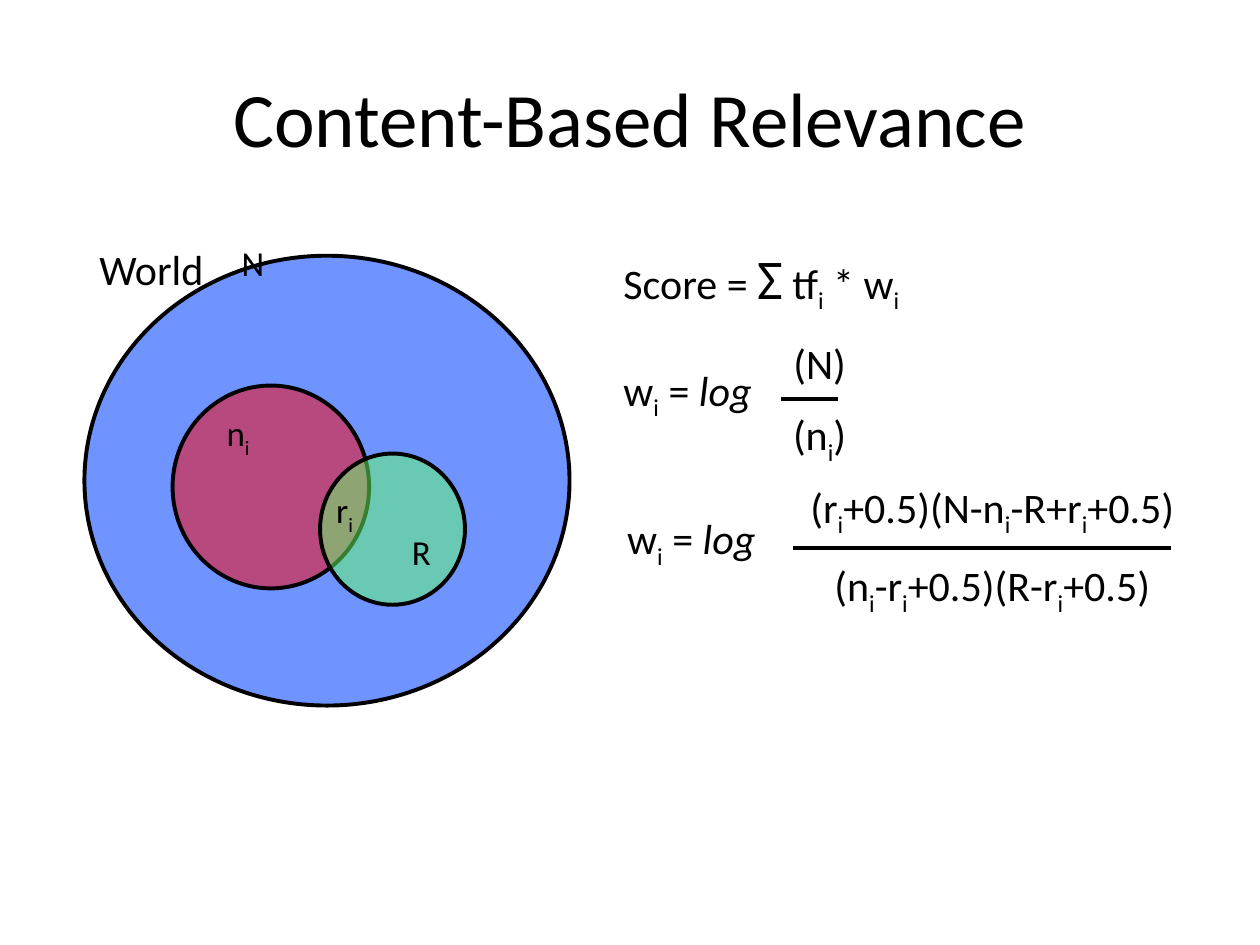
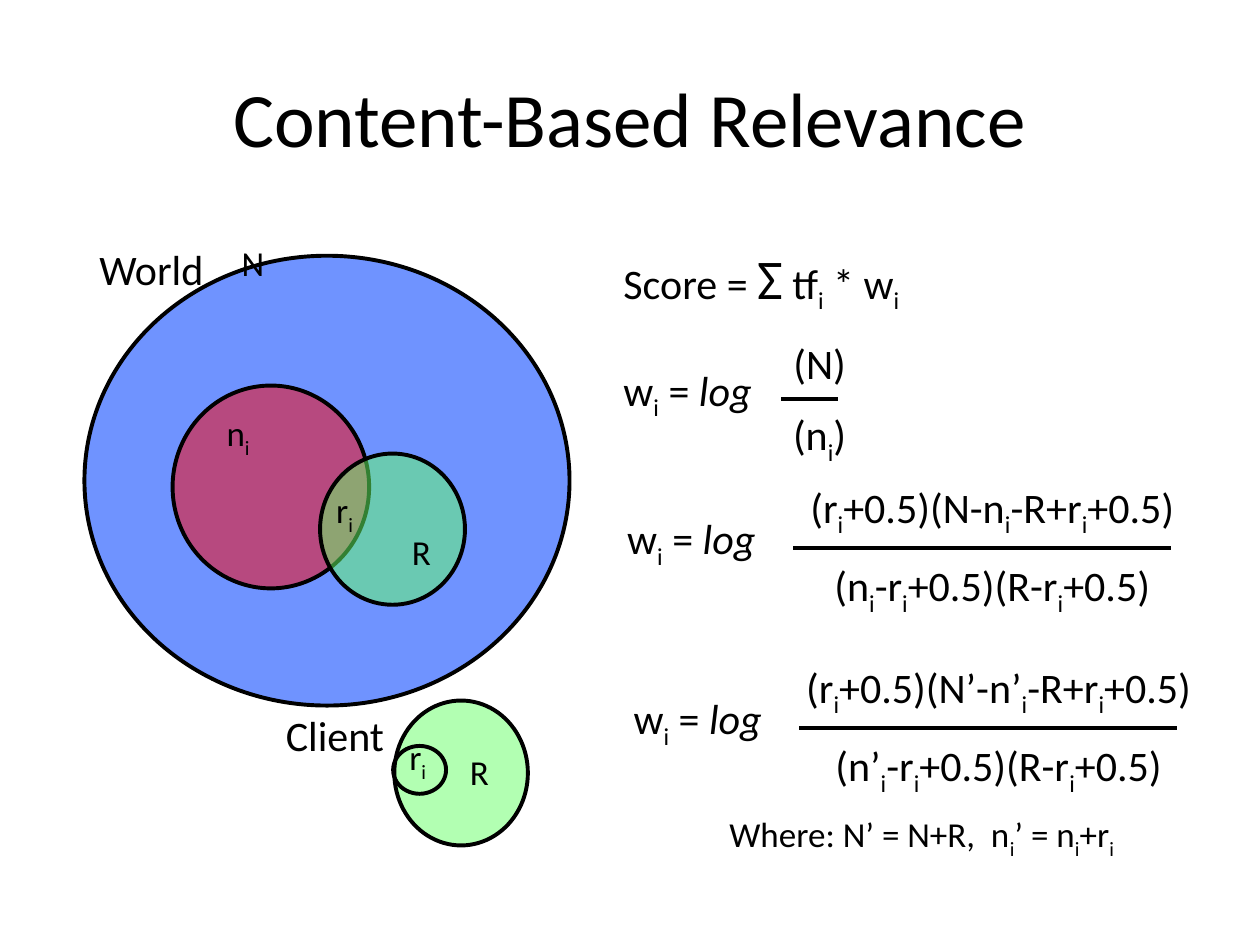
import pptx
import pptx.dml.color
import pptx.enum.shapes
import pptx.enum.text
import pptx.oxml
import pptx.oxml.ns
import pptx.util
from lxml import etree

Inches = pptx.util.Inches
Pt = pptx.util.Pt
RGBColor = pptx.dml.color.RGBColor
PP_ALIGN = pptx.enum.text.PP_ALIGN
MSO_ANCHOR = pptx.enum.text.MSO_ANCHOR

BLACK = RGBColor(0x00, 0x00, 0x00)
BLUE = RGBColor(0x33, 0x66, 0xFF)
RED = RGBColor(0xFF, 0x00, 0x00)
GREEN = RGBColor(0x66, 0xFF, 0x66)

FONT = "Calibri"
TITLE = "Content-Based Relevance"
TITLE_SIZE, FORMULA_SIZE, LABEL_SIZE, SUM_SIZE = 44, 24, 20, 32
LINE_WIDTH = Pt(2.25)
WEIGHT = "w|_i| = |/log"


def format_run(run, size, **extra):
    values = {"name": FONT, "size": Pt(size), **extra}
    for name, value in values.items():
        setattr(run.font, name, value)
    run.font.color.rgb = BLACK


def add_runs(paragraph, markup, size):
    """Split markup at "|"; a leading _ is subscript, / italic, ^ enlarged."""
    for segment in markup.split("|"):
        mark = segment[0] if segment[0] in "_/^" else ""
        run = paragraph.add_run()
        run.text = segment[len(mark):]
        if mark == "/":
            format_run(run, size, italic=True)
        else:
            format_run(run, SUM_SIZE if mark == "^" else size)
        if mark == "_":
            run._r.get_or_add_rPr().set("baseline", "-25000")


def add_text(slide, box, lines, size=FORMULA_SIZE, align=PP_ALIGN.LEFT):
    frame = slide.shapes.add_textbox(*map(Inches, box)).text_frame
    frame.word_wrap = True
    for index, line in enumerate(lines):
        paragraph = frame.add_paragraph() if index else frame.paragraphs[0]
        paragraph.alignment = align
        if index:
            paragraph.space_before = Pt(size / 2)
        add_runs(paragraph, line, size)


def add_circle(slide, box, color=None, opacity=50):
    circle = slide.shapes.add_shape(
        pptx.enum.shapes.MSO_SHAPE.OVAL, *map(Inches, box))
    circle.shadow.inherit = False
    circle.line.color.rgb = BLACK
    circle.line.width = LINE_WIDTH
    if color is None:
        circle.fill.background()
        return
    circle.fill.solid()
    circle.fill.fore_color.rgb = color
    color_element = circle._element.spPr.find(".//" + pptx.oxml.ns.qn("a:srgbClr"))
    alpha = etree.SubElement(color_element, pptx.oxml.ns.qn("a:alpha"))
    alpha.set("val", str(opacity * 1000))


def add_fraction_bar(slide, left, top, length):
    bar = slide.shapes.add_connector(
        pptx.enum.shapes.MSO_CONNECTOR.STRAIGHT,
        Inches(left), Inches(top), Inches(left + length), Inches(top))
    bar.line.color.rgb = BLACK
    bar.line.width = LINE_WIDTH
    etree.SubElement(bar._element.spPr, pptx.oxml.ns.qn("a:effectLst"))


def add_weight_formula(slide, left, top, fraction, bar_length, width,
                       bar_drop=0.58, weight_offset=(-1.16, 0.25)):
    """Draw "w = log" in front of a fraction whose bar is centred in its box."""
    add_text(slide, (left, top, width, 1.1), fraction, align=PP_ALIGN.CENTER)
    add_fraction_bar(slide, left + (width - bar_length) / 2 - 0.08,
                     top + bar_drop, bar_length)
    across, down = weight_offset
    add_text(slide, (left + across, top + down, 1.33, 0.5), [WEIGHT])


def add_world(slide):
    add_circle(slide, (0.67, 2.03, 3.85, 3.57), BLUE, opacity=70)
    add_text(slide, (1.82, 1.87, 0.58, 0.43), ["N"], LABEL_SIZE)
    add_circle(slide, (1.37, 3.06, 1.56, 1.61), RED)
    add_text(slide, (1.7, 3.22, 0.5, 0.43), ["n|_i"], LABEL_SIZE)
    add_circle(slide, (2.54, 3.6, 1.15, 1.2), GREEN)
    add_text(slide, (2.57, 3.83, 0.37, 0.44), ["r|_i"], LABEL_SIZE)
    add_text(slide, (3.17, 4.16, 0.32, 0.39), ["R"], LABEL_SIZE)
    add_text(slide, (0.69, 1.88, 1.14, 0.5), ["World"])


def add_client(slide):
    add_circle(slide, (3.13, 5.56, 1.06, 1.15), GREEN)
    add_text(slide, (3.15, 5.79, 0.47, 0.38), ["r|_i"], LABEL_SIZE)
    add_text(slide, (3.63, 5.91, 0.32, 0.38), ["R"], LABEL_SIZE)
    add_circle(slide, (3.12, 5.92, 0.42, 0.38))


def add_relevance_formula(slide, left, top, prime=""):
    fraction = [f"(r|_i|+0.5)(N{prime}-n{prime}|_i|-R+r|_i|+0.5)",
                f"(n{prime}|_i|-r|_i|+0.5)(R-r|_i|+0.5)"]
    add_weight_formula(slide, left, top, fraction, bar_length=3, width=3.67)


def add_shared_formulas(slide):
    add_text(slide, (4.85, 1.88, 3.67, 0.64),
             ["Score = |^Σ| tf|_i| * w|_i"])
    add_weight_formula(slide, 5.46, 2.63, ["(N)", "(n|_i|)"], bar_length=0.45,
                       width=2.09, bar_drop=0.54, weight_offset=(-0.61, 0.21))
    add_relevance_formula(slide, 6.04, 3.77)


def add_titled_slide(presentation):
    slide = presentation.slides.add_slide(presentation.slide_layouts[5])
    title = slide.shapes.title
    position = {"left": 0.5, "top": 0.3, "width": 9, "height": 1.25}
    for name, value in position.items():
        setattr(title, name, Inches(value))
    title.text_frame.vertical_anchor = MSO_ANCHOR.MIDDLE
    paragraph = title.text_frame.paragraphs[0]
    paragraph.alignment = PP_ALIGN.CENTER
    add_runs(paragraph, TITLE, TITLE_SIZE)
    return slide


def main():
    presentation = pptx.Presentation()
    presentation.slide_width = Inches(10)
    presentation.slide_height = Inches(7.5)

    world_slide = add_titled_slide(presentation)
    add_world(world_slide)
    add_shared_formulas(world_slide)

    client_slide = add_titled_slide(presentation)
    add_client(client_slide)
    add_world(client_slide)
    add_shared_formulas(client_slide)
    add_relevance_formula(client_slide, 6.09, 5.2, prime="’")
    add_text(client_slide, (5.69, 6.4, 4.14, 0.43),
             ["Where: N’ = N+R,  n|_i|’ = n|_i|+r|_i"], LABEL_SIZE)
    add_text(client_slide, (2.17, 5.58, 1.14, 0.5), ["Client"])

    presentation.save("out.pptx")


if __name__ == "__main__":
    main()
